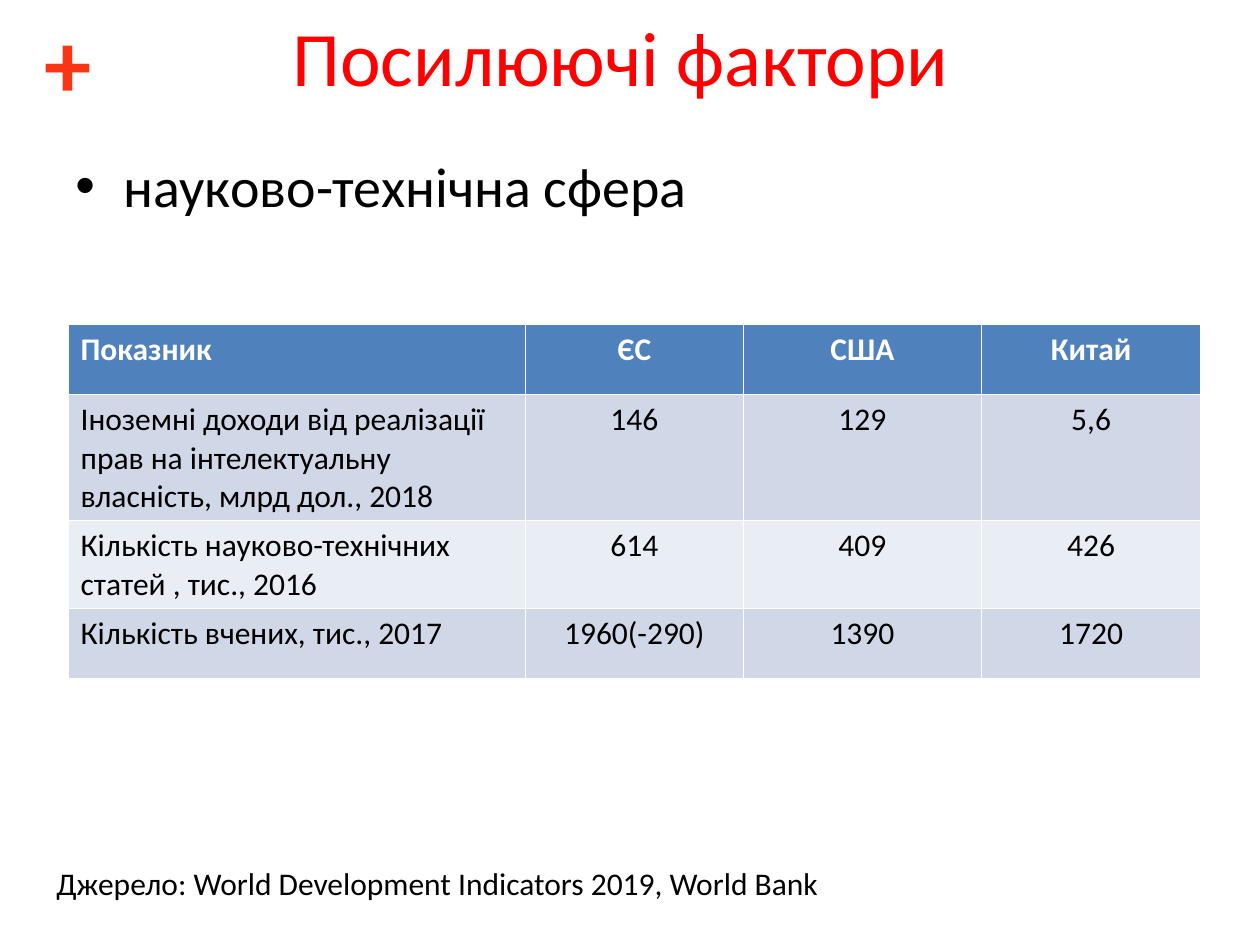
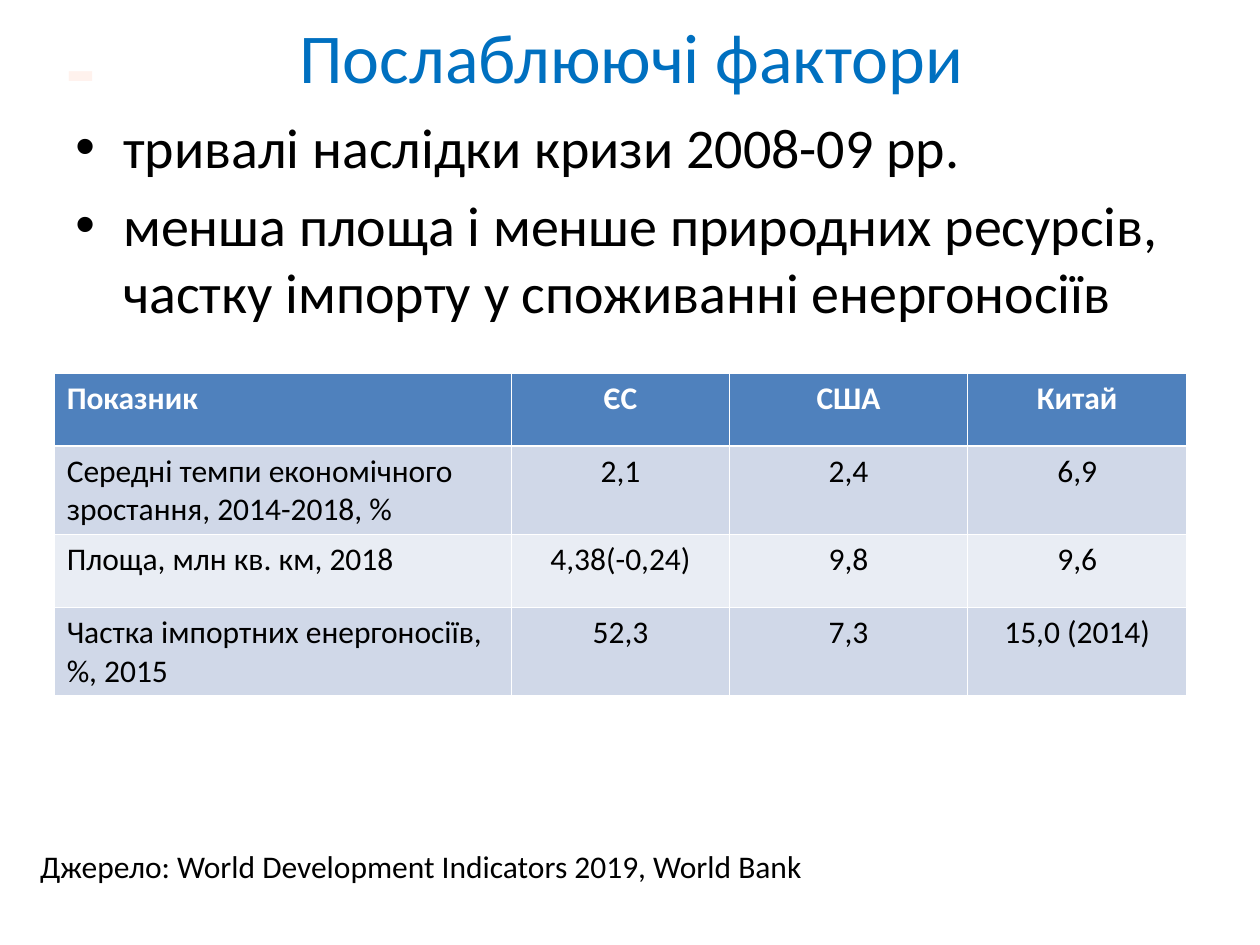
from lxml import etree
from pptx import Presentation
from pptx.dml.color import RGBColor
from pptx.enum import text
from pptx.oxml import ns
from pptx.util import Inches, Pt

FONT = "Calibri"
BLACK, WHITE = "000000", "FFFFFF"
HEADER_FILL = "4F81BD"
BAND_FILLS = ["D0D8E8", "E9EDF4"]
COLUMN_WIDTHS = [3.63, 1.73, 1.89, 1.74]
HEADER = ("Показник", "ЄС", "США", "Китай")
SOURCE = "Джерело: World Development Indicators 2019, World Bank"
BULLET_INDENT = 0.38

SLIDES = [
    {
        "title": ("Посилюючі фактори", 44, "FF0000", 0.43),
        "sign": ("+", "FA3514", (0.17, -0.02, 0.74, 1.01)),
        "bullets": ["науково-технічна сфера"],
        "bullets_top": 1.15,
        "rows": [
            ("Іноземні доходи від реалізації прав на інтелектуальну власність, млрд дол., 2018",
             "146", "129", "5,6"),
            ("Кількість науково-технічних статей , тис., 2016", "614", "409", "426"),
            ("Кількість вчених, тис., 2017", "1960(-290)", "1390", "1720"),
        ],
        "table_at": (0.54, 2.57),
        "row_heights": [0.56, 0.96, 0.67, 0.56],
        "source_at": (0.35, 6.81),
    },
    {
        "title": ("Послаблюючі фактори", 40, "0070C0", 0.51),
        "sign": ("-", "FFF2ED", (0.22, 0.02, 0.84, 1.01)),
        "bullets": [
            "тривалі наслідки кризи 2008-09 рр.",
            "менша площа і менше природних ресурсів, частку імпорту у споживанні енергоносіїв",
        ],
        "bullets_top": 0.84,
        "rows": [
            ("Середні темпи економічного зростання, 2014-2018, %", "2,1", "2,4", "6,9"),
            ("Площа, млн кв. км, 2018", "4,38(-0,24)", "9,8", "9,6"),
            ("Частка імпортних енергоносіїв, %, 2015", "52,3", "7,3", "15,0 (2014)"),
        ],
        "table_at": (0.43, 2.96),
        "row_heights": [0.58] * 4,
        "source_at": (0.22, 6.67),
    },
]


def color(value):
    return RGBColor.from_string(value)


def write(para, words, size, shade=BLACK, bold=False, centered=False):
    para.text = words
    para.font.name = FONT
    para.font.size = Pt(size)
    para.font.bold = bold
    para.font.color.rgb = color(shade)
    para.alignment = text.PP_ALIGN.CENTER if centered else text.PP_ALIGN.LEFT


def add_box(page, left, top, width, height):
    box = page.shapes.add_textbox(*map(Inches, (left, top, width, height)))
    box.text_frame.word_wrap = True
    return box.text_frame


def add_title(page, words, size, shade, left):
    title = page.shapes.title
    title.left, title.top, title.width, title.height = map(Inches, (left, 0.13, 9, 0.62))
    title.text_frame.auto_size = text.MSO_AUTO_SIZE.NONE
    title.text_frame.vertical_anchor = text.MSO_ANCHOR.MIDDLE
    write(title.text_frame.paragraphs[0], words, size, shade, centered=True)


def add_bullets(page, items, top):
    frame = add_box(page, 0.5, top, 9, 7.3 - top)
    for index, item in enumerate(items):
        para = frame.add_paragraph() if index else frame.paragraphs[0]
        write(para, item, 32)
        para.space_before = Pt(6.4)
        properties = para._p.get_or_add_pPr()
        properties.set("marL", str(Inches(BULLET_INDENT)))
        properties.set("indent", str(-Inches(BULLET_INDENT)))
        settings = [("a:buFont", "typeface", "Arial"), ("a:buChar", "char", "•")]
        for position, (tag, key, value) in enumerate(settings, 1):
            bullet = etree.Element(ns.qn(tag))
            bullet.set(key, value)
            properties.insert(position, bullet)


def add_indicators(page, rows, position, heights):
    left, top = position
    size = (sum(COLUMN_WIDTHS), sum(heights))
    table = page.shapes.add_table(
        len(heights), len(COLUMN_WIDTHS), *map(Inches, (left, top, *size))).table
    for column, width in zip(table.columns, COLUMN_WIDTHS):
        column.width = Inches(width)
    for r, values in enumerate([HEADER, *rows]):
        table.rows[r].height = Inches(heights[r])
        is_header = r == 0
        fill = HEADER_FILL if is_header else BAND_FILLS[(r - 1) % 2]
        for c, value in enumerate(values):
            cell = table.cell(r, c)
            cell.fill.solid()
            cell.fill.fore_color.rgb = color(fill)
            write(cell.text_frame.paragraphs[0], value, 18,
                  WHITE if is_header else BLACK, is_header, c > 0)


def main():
    deck = Presentation()
    deck.slide_width, deck.slide_height = Inches(10), Inches(7.5)
    for content in SLIDES:
        page = deck.slides.add_slide(deck.slide_layouts.get_by_name("Title Only"))
        add_title(page, *content["title"])
        add_bullets(page, content["bullets"], content["bullets_top"])
        add_indicators(page, content["rows"], content["table_at"], content["row_heights"])
        source = add_box(page, *content["source_at"], 9.37, 0.4)
        write(source.paragraphs[0], SOURCE, 18)
        sign, shade, place = content["sign"]
        write(add_box(page, *place).paragraphs[0], sign, 54, shade, True, True)
    deck.save("out.pptx")


if __name__ == "__main__":
    main()
